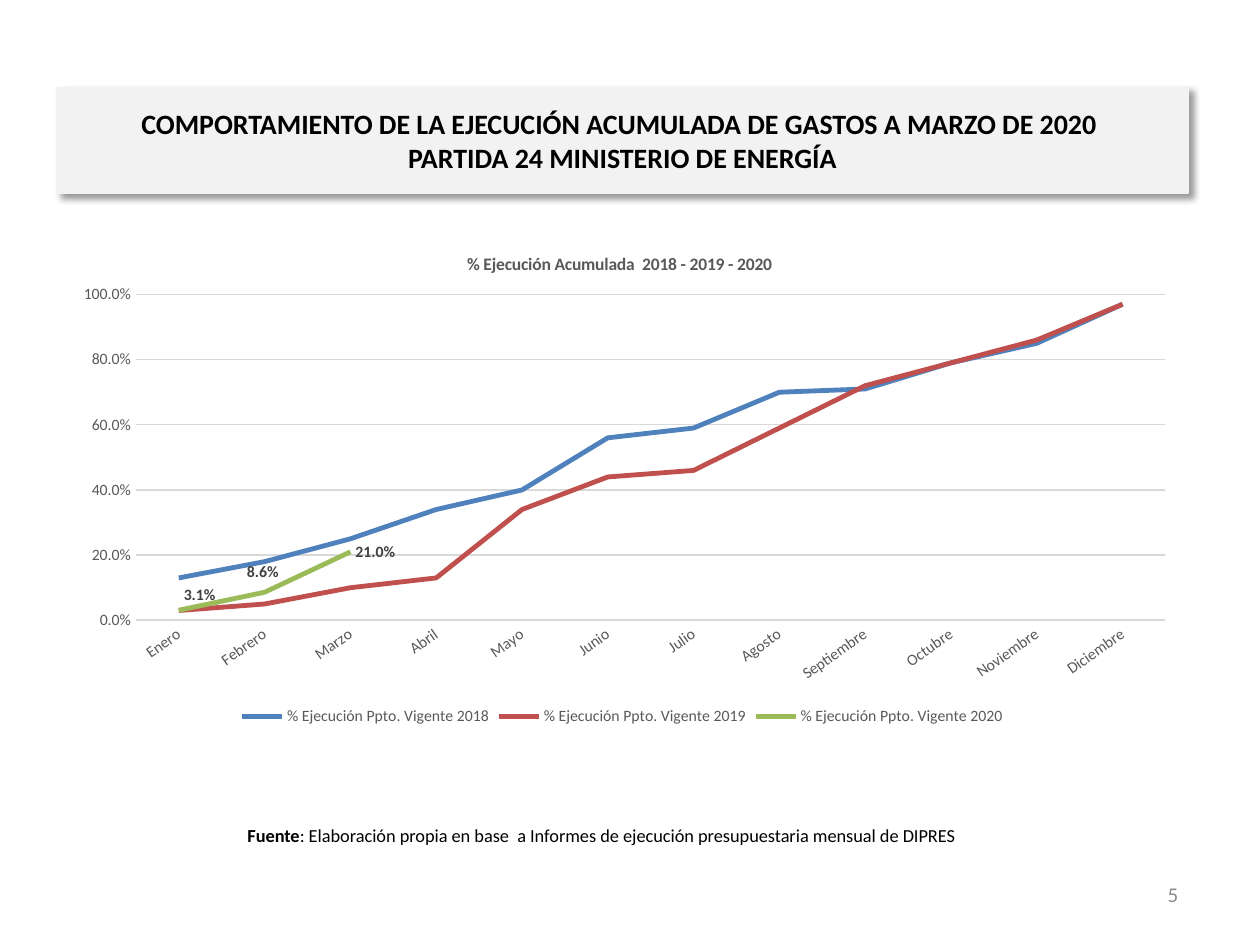
"""Builds the slide on accumulated budget execution of the energy ministry."""
from lxml import etree
from pptx import Presentation
from pptx.chart.data import CategoryChartData
from pptx.dml.color import RGBColor
from pptx.enum.chart import XL_CHART_TYPE, XL_LEGEND_POSITION, XL_LABEL_POSITION, XL_TICK_MARK
from pptx.enum.text import MSO_ANCHOR, MSO_AUTO_SIZE, PP_ALIGN
from pptx.oxml import parse_xml
from pptx.oxml.ns import nsdecls, qn
from pptx.util import Inches, Pt

LINE = XL_CHART_TYPE.LINE
BOTTOM = XL_LEGEND_POSITION.BOTTOM
RIGHT_OF_POINT = XL_LABEL_POSITION.RIGHT
NO_TICK = XL_TICK_MARK.NONE
MIDDLE = MSO_ANCHOR.MIDDLE
GROW = MSO_AUTO_SIZE.SHAPE_TO_FIT_TEXT
CENTER, RIGHT = PP_ALIGN.CENTER, PP_ALIGN.RIGHT
PERCENT = "0.0%"


def style_font(font, size, color, bold=False):
    font.name = "Calibri"
    font.size = Pt(size)
    font.bold = bold
    font.color.rgb = RGBColor.from_string(color)


def place(parent, index, **values):
    for old in parent.findall(qn("c:layout")):
        parent.remove(old)
    layout = parse_xml(f"<c:layout {nsdecls('c')}><c:manualLayout/></c:layout>")
    for name, value in values.items():
        etree.SubElement(layout[0], qn(f"c:{name}")).set("val", str(value))
    parent.insert(index, layout)


presentation = Presentation()
presentation.slide_width, presentation.slide_height = Inches(10), Inches(7.5)
slide = presentation.slides.add_slide(presentation.slide_layouts[5])

title = slide.shapes.title
title.left, title.top = Inches(0.45), Inches(0.79)
title.width, title.height = Inches(8.98), Inches(0.65)
title.fill.solid()
title.fill.fore_color.rgb = RGBColor.from_string("F2F2F2")
title.line.color.rgb = RGBColor.from_string("F2F2F2")
title.line.width = Pt(0.75)
title.element.spPr.append(parse_xml(
    f'<a:effectLst {nsdecls("a")}><a:outerShdw blurRad="50800" dist="38100" dir="2700000" '
    'algn="tl" rotWithShape="0"><a:srgbClr val="000000"><a:alpha val="40000"/></a:srgbClr>'
    '</a:outerShdw></a:effectLst>'))
title.text_frame.word_wrap = True
title.text_frame.auto_size = GROW
title.text_frame.vertical_anchor = MIDDLE
paragraph = title.text_frame.paragraphs[0]
paragraph.alignment = CENTER
run = paragraph.add_run()
run.text = "COMPORTAMIENTO DE LA EJECUCIÓN ACUMULADA DE GASTOS A MARZO DE 2020 "
style_font(run.font, 16, "000000", True)
paragraph.add_line_break()
run = paragraph.add_run()
run.text = "PARTIDA 24 MINISTERIO DE ENERGÍA"
style_font(run.font, 16, "000000", True)

text_boxes = [
    (0.94, 6.43, 7.67, CENTER, 10.5, "000000", [
        ("Fuente", True),
        (": Elaboración propia en base  a Informes de ejecución presupuestaria mensual de DIPRES", False)]),
    (7.12, 6.9, 2.33, RIGHT, 12, "8C8C8C", [("5", False)]),
]
for left, top, width, alignment, size, color, runs in text_boxes:
    box = slide.shapes.add_textbox(Inches(left), Inches(top), Inches(width), Inches(0.4))
    box.text_frame.word_wrap = True
    box.text_frame.vertical_anchor = MIDDLE
    paragraph = box.text_frame.paragraphs[0]
    paragraph.alignment = alignment
    for text, bold in runs:
        run = paragraph.add_run()
        run.text = text
        style_font(run.font, size, color, bold)

execution = {
    2018: ("4F81BD", [0.13, 0.18, 0.25, 0.34, 0.4, 0.56, 0.59, 0.7, 0.71, 0.79, 0.85, 0.97]),
    2019: ("C0504D", [0.03, 0.05, 0.1, 0.13, 0.34, 0.44, 0.46, 0.59, 0.72, 0.79, 0.86, 0.97]),
    2020: ("9BBB59", [0.031, 0.086, 0.21]),
}
chart_data = CategoryChartData(number_format=PERCENT)
chart_data.categories = ["Enero", "Febrero", "Marzo", "Abril", "Mayo", "Junio", "Julio", "Agosto",
                         "Septiembre", "Octubre", "Noviembre", "Diciembre"]
for year, (color, values) in execution.items():
    chart_data.add_series(f"% Ejecución Ppto. Vigente {year}", values)
chart = slide.shapes.add_chart(
    LINE, Inches(0.45), Inches(1.82), Inches(8.98), Inches(3.98), chart_data).chart
style_font(chart.font, 10, "000000")

chart.has_title = True
run = chart.chart_title.text_frame.paragraphs[0].add_run()
run.text = "% Ejecución Acumulada  2018 - 2019 - 2020"
style_font(run.font, 10, "595959", True)
place(chart.chart_title.element if hasattr(chart.chart_title, "element") else chart.chart_title._element,
      1, xMode="edge", yMode="edge", x=0.36, y=0.04)

chart.has_legend = True
chart.legend.position = BOTTOM
chart.legend.include_in_layout = False
style_font(chart.legend.font, 9, "595959")

category_axis, value_axis = chart.category_axis, chart.value_axis
for axis in (category_axis, value_axis):
    axis.major_tick_mark = axis.minor_tick_mark = NO_TICK
    style_font(axis.tick_labels.font, 9, "595959")
category_axis.format.line.color.rgb = RGBColor.from_string("D9D9D9")
category_axis.format.line.width = Pt(1)
category_axis._element.xpath("c:txPr/a:bodyPr")[0].set("rot", "-2100000")
value_axis.minimum_scale, value_axis.maximum_scale = 0, 1
value_axis.major_unit = 0.2
value_axis.tick_labels.number_format = PERCENT
value_axis.tick_labels.number_format_is_linked = False
value_axis.format.line.fill.background()
value_axis.major_gridlines.format.line.color.rgb = RGBColor.from_string("D9D9D9")
value_axis.major_gridlines.format.line.width = Pt(0.75)

plot = chart.plots[0]
plot.vary_by_categories = False
for series, (color, values) in zip(plot.series, execution.values()):
    series.smooth = False
    series.format.line.color.rgb = RGBColor.from_string(color)
    series.format.line.width = Pt(2.75)

current_year = plot.series[2]
labels = current_year.data_labels
labels.show_value = True
labels.number_format = PERCENT
labels.number_format_is_linked = False
labels.position = RIGHT_OF_POINT
style_font(labels.font, 9, "404040", True)
for index, (x, y) in enumerate([(0, -0.03), (-0.02, -0.04)]):
    label = current_year.points[index].data_label
    style_font(label.font, 9, "404040", True)
    label.position = RIGHT_OF_POINT
    place(current_year._element.xpath("c:dLbls/c:dLbl")[index], 1, x=x, y=y)

place(chart._chartSpace.chart.plotArea, 0, layoutTarget="inner", xMode="edge", yMode="edge",
      x=0.07, y=0.13, w=0.91, h=0.65)

presentation.save("out.pptx")
